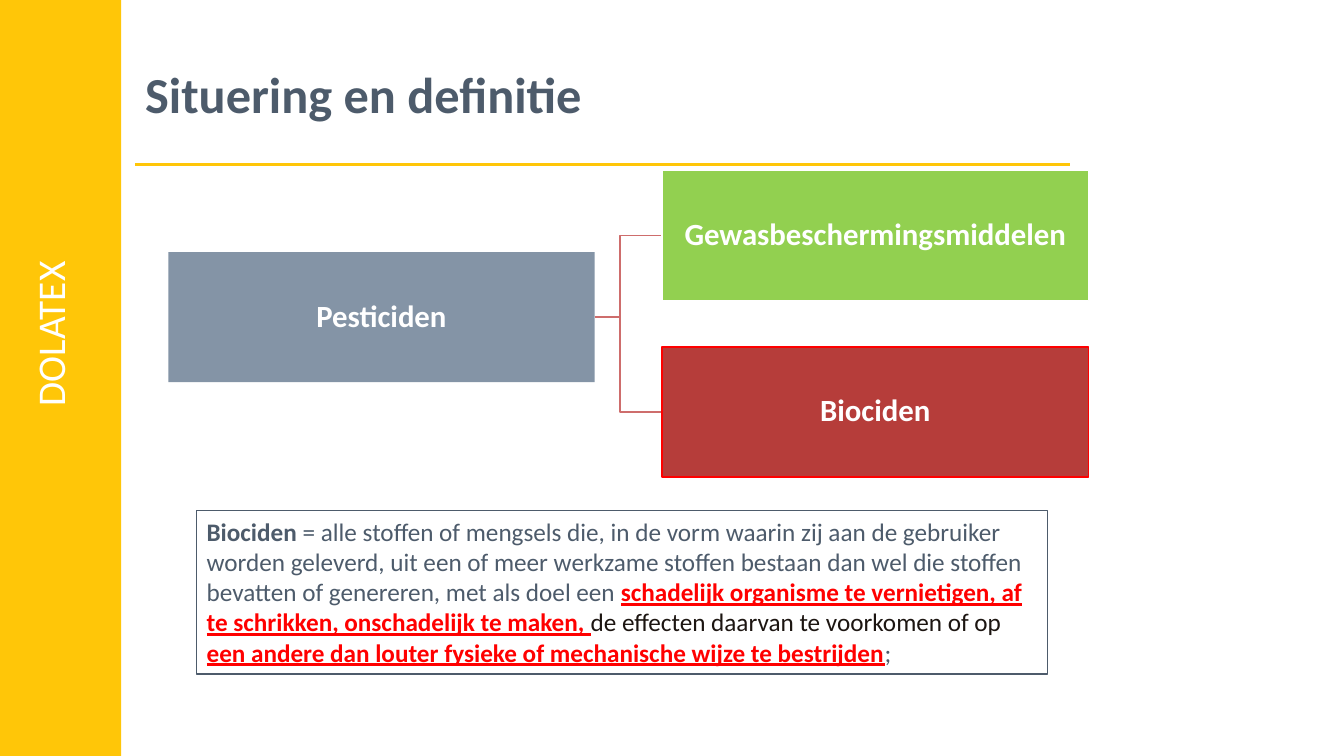
from pptx import Presentation
from pptx import util as u
from pptx.dml.color import RGBColor
from pptx.enum import shapes, text
from lxml import etree
from pptx.oxml import ns

Pt = u.Pt
YELLOW, SLATE, WHITE, RED = "FFC608", "4D5B6B", "FFFFFF", "FF0000"


def paint(target, color):
    target.rgb = RGBColor.from_string(color)


def style(font, size, color, bold=False, underline=False):
    font.name = "Calibri"
    font.size = Pt(size)
    font.bold = bold
    font.underline = underline
    paint(font.color, color)


deck = Presentation()
deck.slide_width, deck.slide_height = Pt(960), Pt(540)
page = deck.slides.add_slide(deck.slide_layouts[5])

sidebar = page.shapes.add_shape(shapes.MSO_SHAPE.RECTANGLE, 0, 0, Pt(86.5), Pt(540))
sidebar.shadow.inherit = False
sidebar.fill.solid()
paint(sidebar.fill.fore_color, YELLOW)
sidebar.line.fill.background()

project = page.shapes.add_textbox(Pt(15), Pt(158.5), Pt(48), Pt(160))
project.text_frame.word_wrap = True
project.text_frame.text = "DOLATEX"
project.text_frame._txBody.bodyPr.set("vert", "vert270")
para = project.text_frame.paragraphs[0]
para.alignment = text.PP_ALIGN.CENTER
style(para.runs[0].font, 28, WHITE)

rule = page.shapes.add_connector(
    shapes.MSO_CONNECTOR.STRAIGHT, Pt(96.5), Pt(117.25), Pt(764), Pt(117.25))
etree.SubElement(rule._element.spPr, ns.qn("a:effectLst"))
paint(rule.line.color, YELLOW)
rule.line.width = Pt(2.25)

title = page.shapes.title
title.left, title.top, title.width, title.height = Pt(96.5), Pt(21.5), Pt(667.5), Pt(90)
title.text_frame.text = "Situering en definitie"
title.text_frame.vertical_anchor = text.MSO_ANCHOR.MIDDLE
para = title.text_frame.paragraphs[0]
para.alignment = text.PP_ALIGN.LEFT
style(para.runs[0].font, 36, SLATE, True)

box_width, box_height = 304.5, 93
parent_left, parent_top = 120.25, 180
child_left, child_tops = 473, (121.75, 247.75)
parent_right, bend = parent_left + box_width, 443
parent_middle = parent_top + box_height / 2

for child_top in reversed(child_tops):
    child_middle = child_top + box_height / 2
    builder = page.shapes.build_freeform(Pt(parent_right), Pt(parent_middle))
    builder.add_line_segments(
        [(Pt(bend), Pt(parent_middle)), (Pt(bend), Pt(child_middle)),
         (Pt(child_left), Pt(child_middle))], close=False)
    branch = builder.convert_to_shape()
    branch.shadow.inherit = False
    branch.fill.background()
    paint(branch.line.color, "CE6D6C")
    branch.line.width = Pt(1.25)

categories = [
    ("Pesticiden", parent_left, parent_top, "8494A6", None),
    ("Gewasbeschermingsmiddelen", child_left, child_tops[0], "92D050", WHITE),
    ("Biociden", child_left, child_tops[1], "B63D3A", RED),
]
for name, left, top, fill, outline in categories:
    box = page.shapes.add_shape(
        shapes.MSO_SHAPE.RECTANGLE, Pt(left), Pt(top), Pt(box_width), Pt(box_height))
    box.shadow.inherit = False
    box.fill.solid()
    paint(box.fill.fore_color, fill)
    if outline:
        paint(box.line.color, outline)
        box.line.width = Pt(1.25)
    else:
        box.line.fill.background()
    frame = box.text_frame
    frame.margin_left = frame.margin_right = frame.margin_top = frame.margin_bottom = Pt(1.5)
    frame.word_wrap = True
    frame.vertical_anchor = text.MSO_ANCHOR.MIDDLE
    frame.text = name
    para = frame.paragraphs[0]
    para.alignment = text.PP_ALIGN.CENTER
    para.line_spacing = 0.9
    style(para.runs[0].font, 22, WHITE, True)

definition = page.shapes.add_textbox(Pt(140.5), Pt(365), Pt(607.5), Pt(116.5))
paint(definition.line.color, SLATE)
definition.line.width = Pt(0.75)
definition.text_frame.word_wrap = True
para = definition.text_frame.paragraphs[0]
for words, color, bold, underline in [
    ("Biociden", SLATE, True, False),
    (" = alle stoffen of mengsels die, in de vorm waarin zij aan de gebruiker worden "
     "geleverd, uit een of meer werkzame stoffen bestaan dan wel die stoffen bevatten "
     "of genereren, met als doel een ", SLATE, False, False),
    ("schadelijk organisme te vernietigen, af te schrikken, onschadelijk te maken, ",
     RED, True, True),
    ("de effecten daarvan te voorkomen of op ", "1C1511", False, False),
    ("een andere dan louter fysieke of mechanische wijze te bestrijden", RED, True, True),
    (";", SLATE, False, False),
]:
    span = para.add_run()
    span.text = words
    style(span.font, 18, color, bold, underline)

deck.save("out.pptx")
